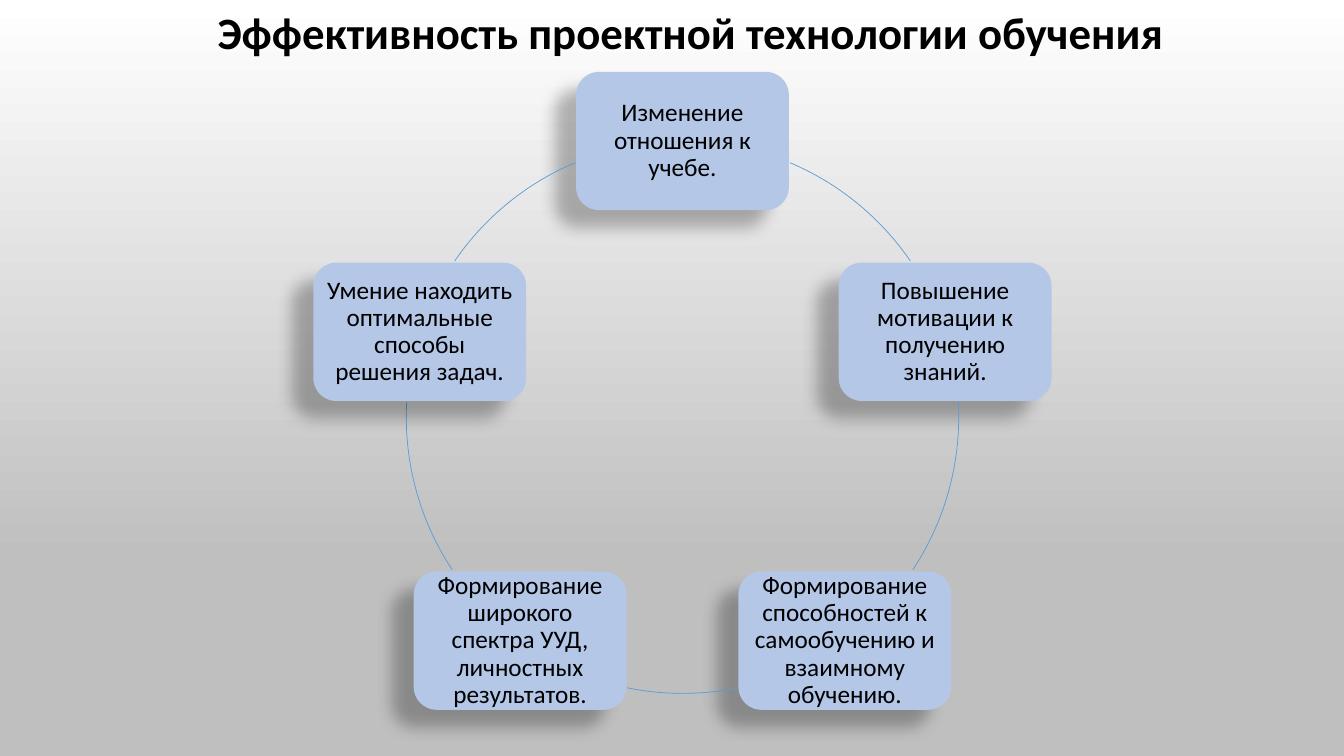
from dataclasses import dataclass
from math import cos, radians, sin

from lxml.etree import SubElement
from pptx import Presentation
from pptx.dml.color import RGBColor
from pptx.enum.shapes import MSO_SHAPE
from pptx.enum.text import MSO_ANCHOR, MSO_AUTO_SIZE, PP_ALIGN
from pptx.oxml.ns import qn
from pptx.shapes.autoshape import Shape
from pptx.slide import Slide
from pptx.util import Pt

CENTER_X, CENTER_Y, RADIUS = 487.5, 298, 197.3
BOX_WIDTH, BOX_HEIGHT = 152, 98.8
INSET = 5
TITLE = "Эффективность проектной технологии обучения"


@dataclass(frozen=True)
class Step:
    text: str
    arc_start: float
    arc_end: float


STEPS = [
    Step("Изменение отношения к учебе.", 292.9, 325.6),
    Step("Повышение мотивации к получению знаний.", 356.9, 33.5),
    Step("Формирование способностей к самообучению и взаимному обучению.", 78.4, 101.6),
    Step("Формирование широкого спектра УУД, личностных результатов.", 146.5, 183.1),
    Step("Умение находить оптимальные способы решения задач.", 214.4, 247.1),
]


def color(value: str) -> RGBColor:
    return RGBColor.from_string(value)


def apply(target: object, values: dict) -> None:
    for name, value in values.items():
        setattr(target, name, value)


def write(shape: Shape, text: str, size: float, bold: bool,
          line_spacing: float, frame_format: dict) -> None:
    frame = shape.text_frame
    frame.text = text
    apply(frame, {"word_wrap": True, "auto_size": MSO_AUTO_SIZE.NONE, **frame_format})
    paragraph = frame.paragraphs[0]
    apply(paragraph, {"alignment": PP_ALIGN.CENTER, "line_spacing": line_spacing,
                      "space_before": Pt(0)})
    font = paragraph.runs[0].font
    apply(font, {"name": "Calibri", "size": Pt(size), "bold": bold})
    font.color.rgb = color("000000")


def add_soft_shadow(shape: Shape) -> None:
    effects = shape.element.spPr.find(qn("a:effectLst"))
    shadow = SubElement(effects, qn("a:outerShdw"), blurRad=str(Pt(11.8)),
                        dist=str(Pt(19.7)), dir=str(141 * 60000),
                        algn="ctr", rotWithShape="0")
    tint = SubElement(shadow, qn("a:srgbClr"), val="000000")
    SubElement(tint, qn("a:alpha"), val="28000")


def draw_box(slide: Slide, step: Step, angle: float) -> None:
    x = CENTER_X + RADIUS * cos(radians(angle))
    y = CENTER_Y + RADIUS * sin(radians(angle))
    box = slide.shapes.add_shape(
        MSO_SHAPE.ROUNDED_RECTANGLE, Pt(x - BOX_WIDTH / 2), Pt(y - BOX_HEIGHT / 2),
        Pt(BOX_WIDTH), Pt(BOX_HEIGHT))
    box.shadow.inherit = False
    add_soft_shadow(box)
    box.fill.solid()
    box.fill.fore_color.rgb = color("B4C7E7")
    box.line.fill.background()
    margins = {f"margin_{side}": Pt(INSET) for side in ("left", "right", "top", "bottom")}
    write(box, step.text, 18, False, 0.9,
          {"vertical_anchor": MSO_ANCHOR.MIDDLE, **margins})


def draw_arc(slide: Slide, step: Step) -> None:
    arc = slide.shapes.add_shape(
        MSO_SHAPE.ARC, Pt(CENTER_X - RADIUS), Pt(CENTER_Y - RADIUS),
        Pt(2 * RADIUS), Pt(2 * RADIUS))
    for index, angle in enumerate((step.arc_start, step.arc_end)):
        arc.adjustments[index] = angle * 0.6
    arc.shadow.inherit = False
    arc.fill.background()
    arc.line.color.rgb = color("5B9BD5")
    arc.line.width = Pt(0.5)


def paint_background(slide: Slide) -> None:
    fill = slide.background.fill
    fill.gradient()
    fill.gradient_angle = 270
    for stop, (position, value) in zip(fill.gradient_stops,
                                       ((0, "FFFFFF"), (0.74, "BFBFBF"))):
        stop.position = position
        stop.color.rgb = color(value)


def main() -> None:
    presentation = Presentation()
    apply(presentation, {"slide_width": Pt(960), "slide_height": Pt(540)})
    slide = presentation.slides.add_slide(presentation.slide_layouts[5])
    paint_background(slide)
    title = slide.shapes.title
    apply(title, {"left": Pt(116.6), "top": Pt(0), "width": Pt(753.8), "height": Pt(46)})
    write(title, TITLE, 32, True, 1.0, {"vertical_anchor": MSO_ANCHOR.TOP})
    for index, step in enumerate(STEPS):
        draw_box(slide, step, index * 360 / len(STEPS) - 90)
        draw_arc(slide, step)
    presentation.save("out.pptx")


if __name__ == "__main__":
    main()
